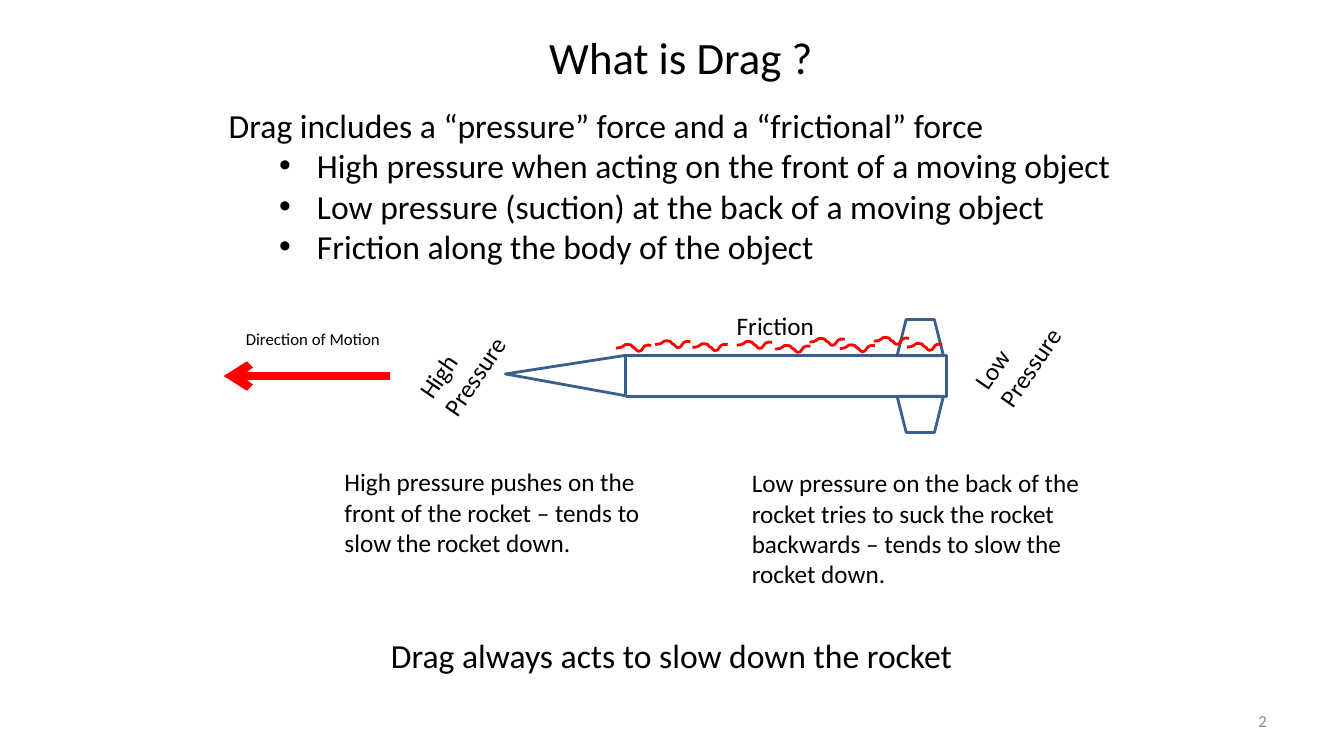
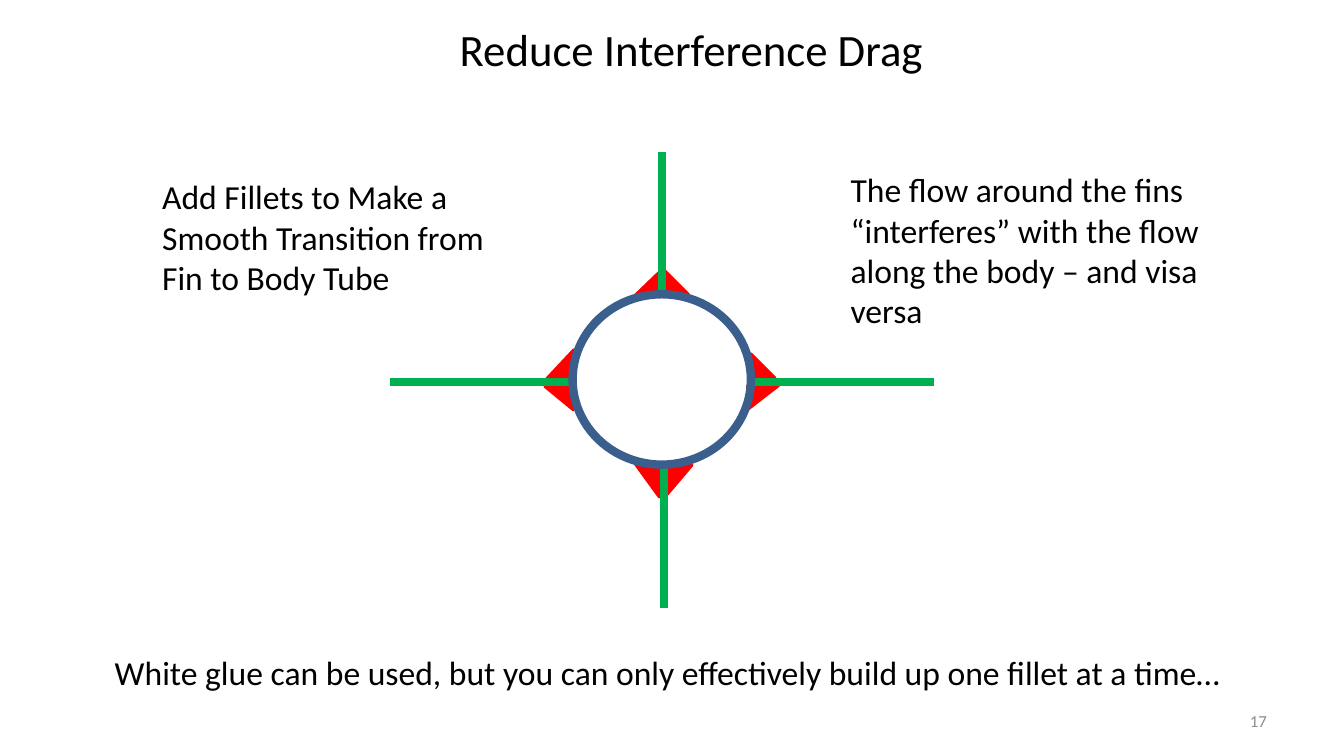
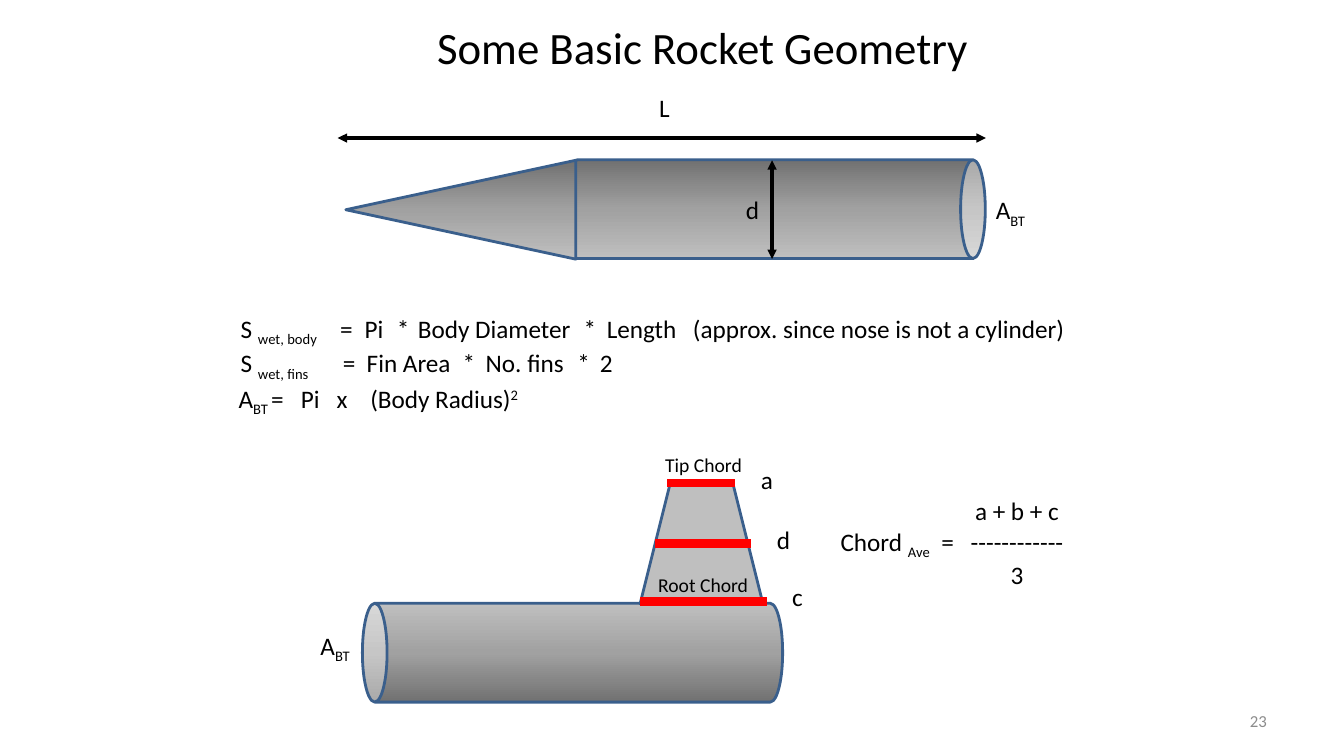
from copy import deepcopy

from lxml import etree
from pptx import Presentation
from pptx.dml.color import RGBColor
from pptx.enum.shapes import MSO_CONNECTOR, MSO_SHAPE
from pptx.enum.text import MSO_ANCHOR, MSO_AUTO_SIZE, PP_ALIGN
from pptx.oxml.ns import qn
from pptx.util import Pt

# Shared style
FONT = "Calibri"
BLACK, GREY, RED, GREEN, BLUE = "000000", "8C8C8C", "FF0000", "00B050", "3A5F8C"
SILVER = "BFBFBF"
METAL = [(0, "717171"), (0.5, "A1A1A1"), (1, SILVER)]
SUB, SUPER = -25000, 30000
LEFT, MID, RIGHT = PP_ALIGN.LEFT, PP_ALIGN.CENTER, PP_ALIGN.RIGHT
TOP, MIDDLE = MSO_ANCHOR.TOP, MSO_ANCHOR.MIDDLE
FIXED = MSO_AUTO_SIZE.NONE
LINE = MSO_CONNECTOR.STRAIGHT
RECT, OVAL, CAN = MSO_SHAPE.RECTANGLE, MSO_SHAPE.OVAL, MSO_SHAPE.CAN
CONE, CORNER = MSO_SHAPE.ISOSCELES_TRIANGLE, MSO_SHAPE.RIGHT_TRIANGLE
FIN = MSO_SHAPE.TRAPEZOID
TITLE_ONLY, TITLE_LIST = 5, 1

# One ripple of the friction line, and where each ripple starts
RIPPLE = [(0, 2.7), (3.2, 2.3), (5, 1.4), (6.5, 0.2), (8.5, 0), (10.8, 0.5),
          (12, 2), (13.7, 2.9), (14.7, 4.2), (16, 5), (18, 4.5), (19.2, 2.8),
          (20.5, 1.2), (22.5, 0.5), (25.2, 0.7)]
STARTS = [(468, 243.4), (494.6, 245.5), (526.3, 243.9), (440, 246),
          (578.2, 241.7), (553.7, 246.7), (624.2, 241), (599.8, 246.3),
          (647.8, 245.3)]


def paint(hue):
    return RGBColor.from_string(hue)


def place(item, box):
    item.left, item.top, item.width, item.height = [Pt(v) for v in box]


# Text
def add_runs(para, runs, size, hue=BLACK):
    """Each run is a string, or a pair of string and baseline shift."""
    for part in [runs] if isinstance(runs, str) else runs:
        words, shift = (part, 0) if isinstance(part, str) else part
        run = para.add_run()
        run.text = words
        run.font.name, run.font.size = FONT, Pt(size)
        run.font.color.rgb = paint(hue)
        if shift:
            run.font._element.set("baseline", str(shift))


def set_tabs(para, stops):
    tabs = etree.SubElement(para._p.get_or_add_pPr(), qn("a:tabLst"))
    for stop in stops:
        etree.SubElement(tabs, qn("a:tab"), pos=str(Pt(stop)), algn="l")


def write(frame, paras, size, align=LEFT, hue=BLACK, anchor=TOP, tabs=()):
    frame.word_wrap, frame.auto_size = True, FIXED
    frame.vertical_anchor = anchor
    for i, runs in enumerate(paras):
        para = frame.add_paragraph() if i else frame.paragraphs[0]
        para.alignment, para.space_before = align, Pt(0)
        if tabs:
            set_tabs(para, tabs[i])
        add_runs(para, runs, size, hue)


def add_text(slide, box, *paras, size=18, turn=0, **style):
    area = slide.shapes.add_textbox(*[Pt(v) for v in box])
    area.rotation = turn
    write(area.text_frame, paras, size, **style)
    return area.text_frame


def add_list(slide, box, lead, items, size):
    body = slide.placeholders[1]
    place(body, box)
    write(body.text_frame, [lead, *items], size)
    for i, para in enumerate(body.text_frame.paragraphs):
        para.level = min(i, 1)
        props = para._p.get_or_add_pPr()
        props.set("marL", str(Pt(63) if i else 0))
        props.set("indent", str(Pt(-27) if i else 0))
        if i:
            etree.SubElement(props, qn("a:buFont"), typeface="Arial")
            etree.SubElement(props, qn("a:buChar"), char="•")
        else:
            etree.SubElement(props, qn("a:buNone"))


def new_slide(deck, layout, title, box, number):
    slide = deck.slides.add_slide(deck.slide_layouts[layout])
    place(slide.shapes.title, box)
    write(slide.shapes.title.text_frame, [title], 32, MID)
    add_text(slide, (688, 500.5, 224, 28.8), number, size=12, align=RIGHT,
             hue=GREY, anchor=MIDDLE)
    return slide


# Drawing
def finish(shape, fill, hue, width):
    shape.shadow.inherit = False
    shape.line.color.rgb, shape.line.width = paint(hue), Pt(width)
    if fill:
        shape.fill.solid()
        shape.fill.fore_color.rgb = paint(fill)
    else:
        shape.fill.background()


def add_shape(slide, kind, box, turn=0, fill=None, hue=BLUE, width=2):
    shape = slide.shapes.add_shape(kind, *[Pt(v) for v in box])
    shape.rotation = turn
    finish(shape, fill, hue, width)
    return shape


def add_metal(slide, kind, box, turn, angle=0):
    shape = add_shape(slide, kind, box, turn)
    shape.fill.gradient()
    shape.fill.gradient_angle = angle
    stops = shape._element.spPr.find(".//" + qn("a:gsLst"))
    stops.insert(1, deepcopy(stops[0]))
    for stop, (pos, hue) in zip(shape.fill.gradient_stops, METAL):
        stop.position, stop.color.rgb = pos, paint(hue)


def add_line(slide, x1, y1, x2, y2, hue, width, head=None, tail=None):
    line = slide.shapes.add_connector(LINE, Pt(x1), Pt(y1), Pt(x2), Pt(y2))
    line.line.color.rgb, line.line.width = paint(hue), Pt(width)
    props = line._element.spPr
    for tag, kind in (("a:headEnd", head), ("a:tailEnd", tail)):
        if kind:
            etree.SubElement(props.find(qn("a:ln")), qn(tag), type=kind)
    etree.SubElement(props, qn("a:effectLst"))


def add_ripple(slide, left, top):
    dots = [(Pt(left + x), Pt(top + y)) for x, y in RIPPLE]
    form = slide.shapes.build_freeform(*dots[0])
    form.add_line_segments(dots[1:], close=False)
    finish(form.convert_to_shape(), None, RED, 2)


# Slides
def drag_slide(deck):
    slide = new_slide(deck, TITLE_LIST, "What is Drag ?",
                      (279.4, 17.3, 414, 46), "2")
    add_list(slide, (156.2, 71.3, 660, 124),
             "Drag includes a “pressure” force and a “frictional” force",
             ["High pressure when acting on the front of a moving object",
              "Low pressure (suction) at the back of a moving object",
              "Friction along the body of the object"], 24)
    add_text(slide, (272.2, 450, 451, 36),
             "Drag always acts to slow down the rocket", size=24)

    # Rocket
    add_shape(slide, RECT, (447.1, 254.2, 229, 28.8))
    nose = add_shape(slide, CONE, (389.5, 225.4, 28.8, 85.7), 270)
    nose.adjustments[0] = 0.54
    for top, turn in ((228.2, 0), (283, 180)):
        add_shape(slide, FIN, (640.8, top, 33.1, 25.9), turn)
    add_line(slide, 278.6, 268.6, 159.8, 268.6, RED, 6, tail="arrow")
    for left, top in STARTS:
        add_ripple(slide, left, top)

    # Labels
    for left, top, words in ((288, 230.4, "High Pressure"),
                             (684.7, 223.9, "Low Pressure")):
        add_text(slide, (left, top, 93.6, 51.1), words, turn=304.5)
    add_text(slide, (168.5, 231.1, 127.4, 21.6), "Direction of Motion", size=12)
    add_text(slide, (519.1, 218.2, 92.2, 28.8), "Friction")
    add_text(slide, (239, 329.8, 232.6, 72.7),
             "High pressure pushes on the front of the rocket – tends to slow "
             "the rocket down.")
    add_text(slide, (529.9, 330.5, 281.5, 94.3),
             "Low pressure on the back of the rocket tries to suck the rocket "
             "backwards – tends to slow the rocket down.")


def fillet_slide(deck):
    slide = new_slide(deck, TITLE_ONLY, "Reduce Interference Drag",
                      (218.9, 12.2, 550, 46), "17")
    # Fillets, two at each fin
    for box, turn in (((536.4, 252.7, 17.3, 17.3), 0),
                      ((474.5, 193, 17.3, 17.3), 0),
                      ((472.3, 334.1, 23.8, 20.2), 90),
                      ((536.4, 272.9, 17.3, 22.3), 90),
                      ((453.6, 331.2, 17.3, 23.8), 180),
                      ((388.8, 250.6, 21.6, 20.2), 270),
                      ((389.2, 276.1, 20.2, 16.6), 180),
                      ((454.3, 193, 17.3, 18), 270)):
        add_shape(slide, CORNER, box, turn, RED, RED)
    # Fins and body tube
    for ends in ((536.4, 272.9, 667.4, 272.9), (474.5, 434.2, 474.5, 332.6),
                 (473, 210.2, 473, 108.7), (278.6, 272.9, 409, 272.9)):
        add_line(slide, *ends, GREEN, 6)
    add_shape(slide, OVAL, (409, 210.2, 127.4, 121.7), width=6)
    # Notes beside the drawing
    for box, words in (
            ((74.9, 462.2, 837.4, 36),
             "White glue can be used, but you can only effectively build up "
             "one fillet at a time…"),
            ((108.7, 122.4, 260, 94.3),
             "Add Fillets to Make a Smooth Transition from Fin to Body Tube"),
            ((600.5, 117.4, 282.2, 123.8),
             "The flow around the fins “interferes” with the flow along the "
             "body – and visa versa")):
        add_text(slide, box, words, size=24)


def shape_slide(deck):
    slide = new_slide(deck, TITLE_ONLY, "Some Basic Rocket Geometry",
                      (221.8, 10.8, 560, 46), "23")
    # Rocket body, from the side
    add_metal(slide, CAN, (518.4, -0.7, 70.6, 300.2), 90)
    add_metal(slide, CONE, (293.8, 67.7, 70.6, 164.2), 270, 180)
    for ends in ((551.5, 114.5, 551.5, 185), (704.2, 98.6, 241.2, 98.6)):
        add_line(slide, *ends, BLACK, 2.25, "triangle", "triangle")

    # Tube with a fin and its chords
    add_metal(slide, CAN, (373.7, 316.1, 70.6, 300.2), 270)
    add_shape(slide, FIN, (457.2, 344.9, 87.8, 86.4), fill=SILVER)
    for x1, x2, y in ((476.6, 524.9, 344.9), (468, 536.4, 388.1),
                      (457.2, 547.9, 429.8)):
        add_line(slide, x1, y, x2, y, RED, 6)

    # Labels
    area = ["A", ("BT", SUB)]
    for left, top, words in ((704.2, 135.4, area), (525.6, 135.4, "d"),
                             (463.7, 62.6, "L"), (221.8, 446.4, area),
                             (536.4, 328.3, "a"), (547.9, 370.8, "d"),
                             (558.7, 411.8, "c")):
        add_text(slide, (left, top, 56.9, 28.8), words)
    add_text(slide, (468, 319.7, 72.7, 24.5), "Tip Chord", size=14)
    add_text(slide, (463, 405.4, 87.1, 24.5), "Root Chord", size=14)

    # Formulas
    add_text(slide, (593.3, 372.2, 110, 28.8),
             ["Chord ", ("Ave", SUB), "\t="], tabs=[[72]])
    ratio = add_text(slide, (676.4, 350.6, 100, 72.7),
                     "a + b + c", "------------", "3", align=MID)
    ratio.paragraphs[2].space_before = Pt(2.5)
    add_text(slide, (163.4, 270, 255.6, 28.8),
             ["A", ("BT ", SUB), "=\tPi\tx\t(Body Radius)", ("2", SUPER)],
             tabs=[[44.5, 70, 94]])
    add_text(slide, (164.9, 220.3, 655.2, 51.1),
             ["S ", ("wet, body", SUB),
              "\t=\tPi\t*\tBody Diameter\t*\tLength"
              "\t(approx. since nose is not a cylinder)"],
             ["S ", ("wet, fins", SUB), "\t=\tFin Area\t*\tNo. fins\t*\t2"],
             tabs=[[71, 88.5, 111.5, 126.5, 245, 261.5, 323],
                   [73, 90, 158.5, 175, 240.5, 256.5]])


def main():
    deck = Presentation()
    deck.slide_width, deck.slide_height = Pt(960), Pt(540)
    drag_slide(deck)
    fillet_slide(deck)
    shape_slide(deck)
    deck.save("out.pptx")


if __name__ == "__main__":
    main()
